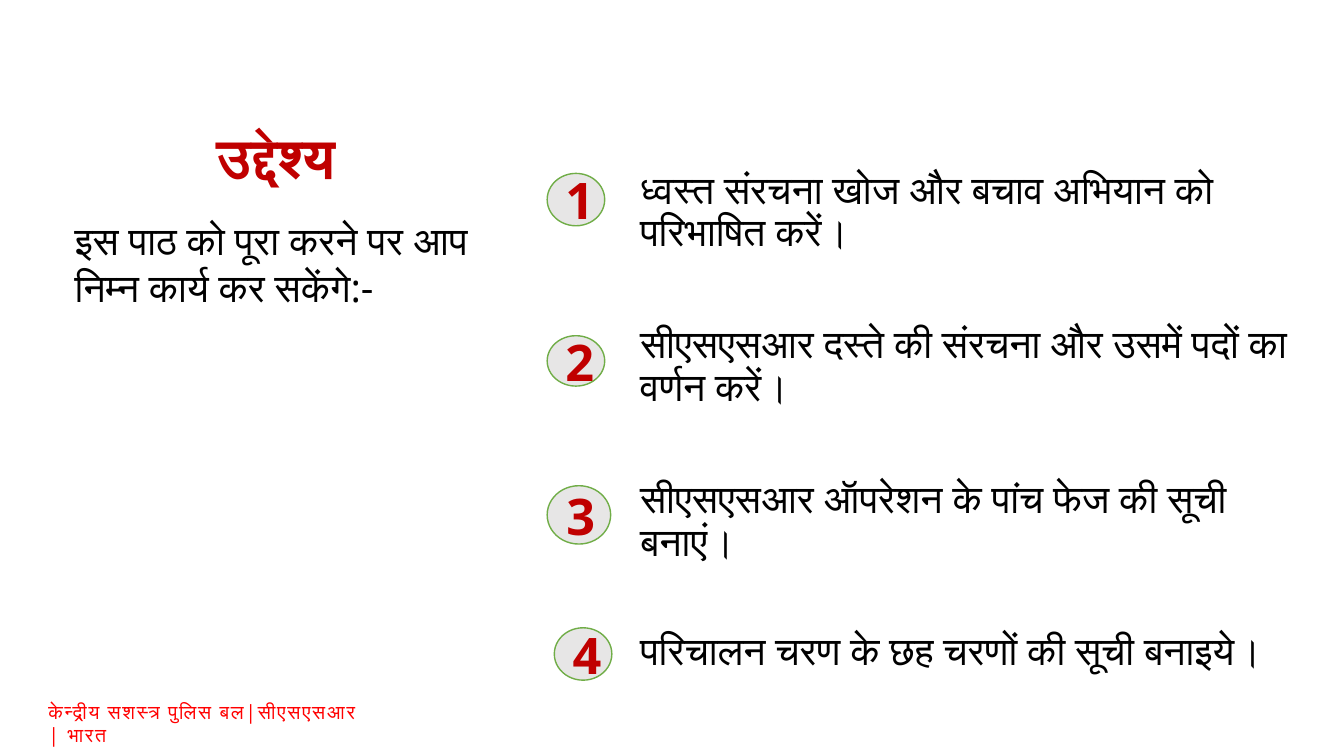
"""Build the lesson objectives slide with four numbered goals."""
from pptx import Presentation
from pptx.dml.color import RGBColor
from pptx.enum.shapes import MSO_SHAPE
from pptx.enum.text import MSO_ANCHOR, PP_ALIGN
from pptx.util import Cm, Pt

OVAL = MSO_SHAPE.OVAL
CENTER = PP_ALIGN.CENTER
MIDDLE = MSO_ANCHOR.MIDDLE
FONT = "Open Sans"
COLORS = {
    "footer": "FF0000",
    "accent": "C00000",
    "text": "000000",
    "badge": "E7E6E6",
    "outline": "70AD47",
}


def style(p, size, color, bold=False):
    for r in p.runs:
        r.font.name = FONT
        r.font.size = Pt(size)
        r.font.bold = bold
        r.font.color.rgb = RGBColor.from_string(COLORS[color])


def add_text(s, box, text, size, color, bold=False):
    tf = s.shapes.add_textbox(*map(Cm, box)).text_frame
    tf.word_wrap = True
    tf.text = text
    for p in tf.paragraphs:
        style(p, size, color, bold)
    return tf


prs = Presentation()
prs.slide_width, prs.slide_height = Cm(33.87), Cm(19.05)
s = prs.slides.add_slide(prs.slide_layouts[6])

tf = add_text(s, (1.12, 17.53, 8.43, 1.42),
              "केन्द्रीय सशस्त्र पुलिस बल|सीएसएसआर | भारत", 14, "footer")
tf.margin_left = tf.margin_right = tf.margin_top = tf.margin_bottom = Cm(0.1)
tf.paragraphs[0].runs[0]._r.get_or_add_rPr().set("spc", "120")

tf = add_text(s, (0.97, 2.84, 12.37, 2.41), "उद्देश्य ", 40, "accent", True)
tf.vertical_anchor = MIDDLE
tf.paragraphs[0].alignment = CENTER
tf.paragraphs[0].line_spacing = 0.9

add_text(s, (1.63, 5.33, 10.72, 3.84),
         "इस पाठ को पूरा करने पर आप निम्न कार्य कर सकेंगे:-", 28, "text")

goals = [
    "ध्वस्त संरचना खोज और बचाव अभियान को परिभाषित करें।",
    "सीएसएसआर दस्ते की संरचना और उसमें पदों का वर्णन करें।",
    "सीएसएसआर ऑपरेशन के पांच फेज की सूची बनाएं।",
    "परिचालन चरण के छह चरणों की सूची बनाइये।",
]
tf = add_text(s, (15.88, 4.17, 16.94, 15.77), "\n".join(goals), 28, "text")
for p, gap in zip(tf.paragraphs, (0, 50, 50, 48)):
    p.line_spacing = 0.9
    p.space_before = Pt(gap)

badges = [
    (13.79, 4.37, 1.45, 1.32),
    (13.79, 8.46, 1.45, 1.27),
    (13.79, 12.24, 1.6, 1.47),
    (13.97, 15.82, 1.45, 1.32),
]
for number, box in enumerate(badges, 1):
    sp = s.shapes.add_shape(OVAL, *map(Cm, box))
    sp.shadow.inherit = False
    sp.fill.solid()
    sp.fill.fore_color.rgb = RGBColor.from_string(COLORS["badge"])
    sp.line.color.rgb = RGBColor.from_string(COLORS["outline"])
    sp.line.width = Pt(1)
    tf = sp.text_frame
    tf.text = str(number)
    tf.vertical_anchor = MIDDLE
    tf.paragraphs[0].alignment = CENTER
    style(tf.paragraphs[0], 36, "accent", True)

prs.save("out.pptx")
